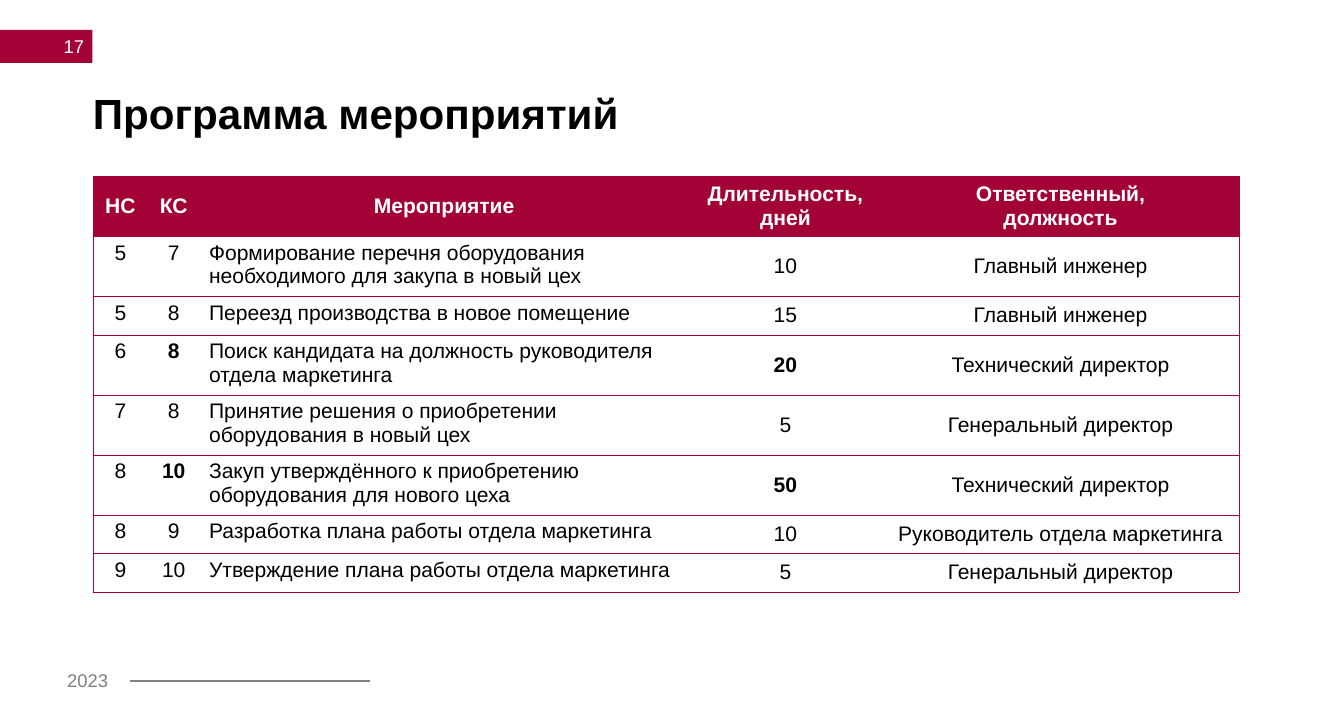
from lxml import etree
from pptx import Presentation
from pptx.dml.color import RGBColor
from pptx.enum.shapes import MSO_CONNECTOR, MSO_SHAPE
from pptx.enum.text import MSO_ANCHOR, PP_ALIGN
from pptx.oxml.ns import qn
from pptx.util import Pt

LEFT, MID, RIGHT = PP_ALIGN.LEFT, PP_ALIGN.CENTER, PP_ALIGN.RIGHT
TOP, CENTRE = MSO_ANCHOR.TOP, MSO_ANCHOR.MIDDLE
RECT, LINE = MSO_SHAPE.RECTANGLE, MSO_CONNECTOR.STRAIGHT

HEX = {"wine": "A30236", "grey": "808080", "white": "FFFFFF", "black": "000000"}
WIDTHS = [41.6, 39.4, 371.4, 146.8, 271]
LOW, TALL = 29.2, 42.8
HEAD = ["НС", "КС", "Мероприятие", "Длительность,\nдней", "Ответственный,\nдолжность"]
TASKS = [
    ["5", "7", "Формирование перечня оборудования необходимого для закупа в новый цех",
     "10", "Главный инженер"],
    ["5", "8", "Переезд производства в новое помещение", "15", "Главный инженер"],
    ["6", "8", "Поиск кандидата на должность руководителя отдела маркетинга",
     "20", "Технический директор"],
    ["7", "8", "Принятие решения о приобретении оборудования в новый цех",
     "5", "Генеральный директор"],
    ["8", "10", "Закуп утверждённого к приобретению оборудования для нового цеха",
     "50", "Технический директор"],
    ["8", "9", "Разработка плана работы отдела маркетинга",
     "10", "Руководитель отдела маркетинга"],
    ["9", "10", "Утверждение плана работы отдела маркетинга",
     "5", "Генеральный директор"],
]
WRAP = 45  # letters that fit on one line of the task column
BOLD = {(3, 1), (3, 3), (5, 1), (5, 3)}


def tint(name):
    return RGBColor.from_string(HEX[name])


def write(frame, text, size, color, bold=False, align=LEFT, space=None):
    """Fill a text frame, one paragraph per line of text."""
    frame.text = text
    for para in frame.paragraphs:
        para.alignment = align
        para.line_spacing = space
        for run in para.runs:
            form = {"name": "Arial", "size": Pt(size), "bold": bold}
            for key, val in form.items():
                setattr(run.font, key, val)
            run.font.color.rgb = tint(color)


def label(slide, box, text, size, color, anchor=TOP, inset=None, **form):
    frame = slide.shapes.add_textbox(*map(Pt, box)).text_frame
    frame.word_wrap = True
    frame.vertical_anchor = anchor
    if inset is not None:
        for side in ("left", "top", "right", "bottom"):
            setattr(frame, "margin_" + side, Pt(inset))
    write(frame, text, size, color, **form)


def badge(slide, box):
    """Page number on a band at the slide edge."""
    x, y, w, h = box
    band = slide.shapes.add_shape(RECT, *map(Pt, box))
    band.shadow.inherit = False
    band.fill.solid()
    band.fill.fore_color.rgb = tint("wine")
    band.line.fill.background()
    label(slide, (x + 13, y - 2, w - 12.3, h + 4), "17", 14, "white", CENTRE,
          align=RIGHT)


def footer(slide, box):
    """Year with a rule to its right."""
    x, y, w, h = box
    label(slide, (x, y, 48.2, h), "2023", 14, "grey")
    mid = y + 13
    rule = slide.shapes.add_connector(LINE, Pt(x + 55), Pt(mid), Pt(x + w), Pt(mid))
    rule.line.color.rgb = tint("grey")
    rule.line.width = Pt(1.5)
    etree.SubElement(rule._element.spPr, qn("a:effectLst"))


def edge(cell, sides):
    """Rule the given sides of a cell and clear the others."""
    props = cell._tc.get_or_add_tcPr()
    for side in "LRTB":
        line = etree.SubElement(props, qn("a:ln" + side), w=str(Pt(0.5)))
        if side in sides:
            fill = etree.SubElement(line, qn("a:solidFill"))
            etree.SubElement(fill, qn("a:srgbClr"), val=HEX["wine"])
        else:
            etree.SubElement(line, qn("a:noFill"))


def plan(slide, spot):
    """Table of tasks under a coloured head row."""
    rows = [HEAD] + TASKS
    highs = [TALL] + [TALL if len(task[2]) > WRAP else LOW for task in TASKS]
    box = (*spot, sum(WIDTHS), sum(highs))
    last = len(HEAD) - 1
    table = slide.shapes.add_table(len(rows), len(HEAD), *map(Pt, box)).table
    table.horz_banding = False
    for col, width in zip(table.columns, WIDTHS):
        col.width = Pt(width)
    for r, texts in enumerate(rows):
        table.rows[r].height = Pt(highs[r])
        head = r == 0
        for c, text in enumerate(texts):
            cell = table.cell(r, c)
            edge(cell, "TB" + "L" * (c == 0) + "R" * (c == last))
            cell.fill.solid()
            cell.fill.fore_color.rgb = tint("wine" if head else "white")
            cell.vertical_anchor = CENTRE if head or c > 2 else TOP
            write(cell.text_frame, text, 16, "white" if head else "black",
                  head or (r, c) in BOLD, LEFT if c == 2 and not head else MID)


def main():
    deck = Presentation()
    deck.slide_width, deck.slide_height = Pt(1020.47), Pt(538.58)
    slide = deck.slides.add_slide(deck.slide_layouts[6])
    badge(slide, (0, 22.8, 70.2, 25))
    label(slide, (70.6, 70.6, 753.8, 56.2), "Программа мероприятий", 32, "black",
          inset=0, bold=True, space=0.9)
    plan(slide, (70.6, 134))
    footer(slide, (43.9, 504.5, 236.7, 24.5))
    deck.save("out.pptx")


if __name__ == "__main__":
    main()
